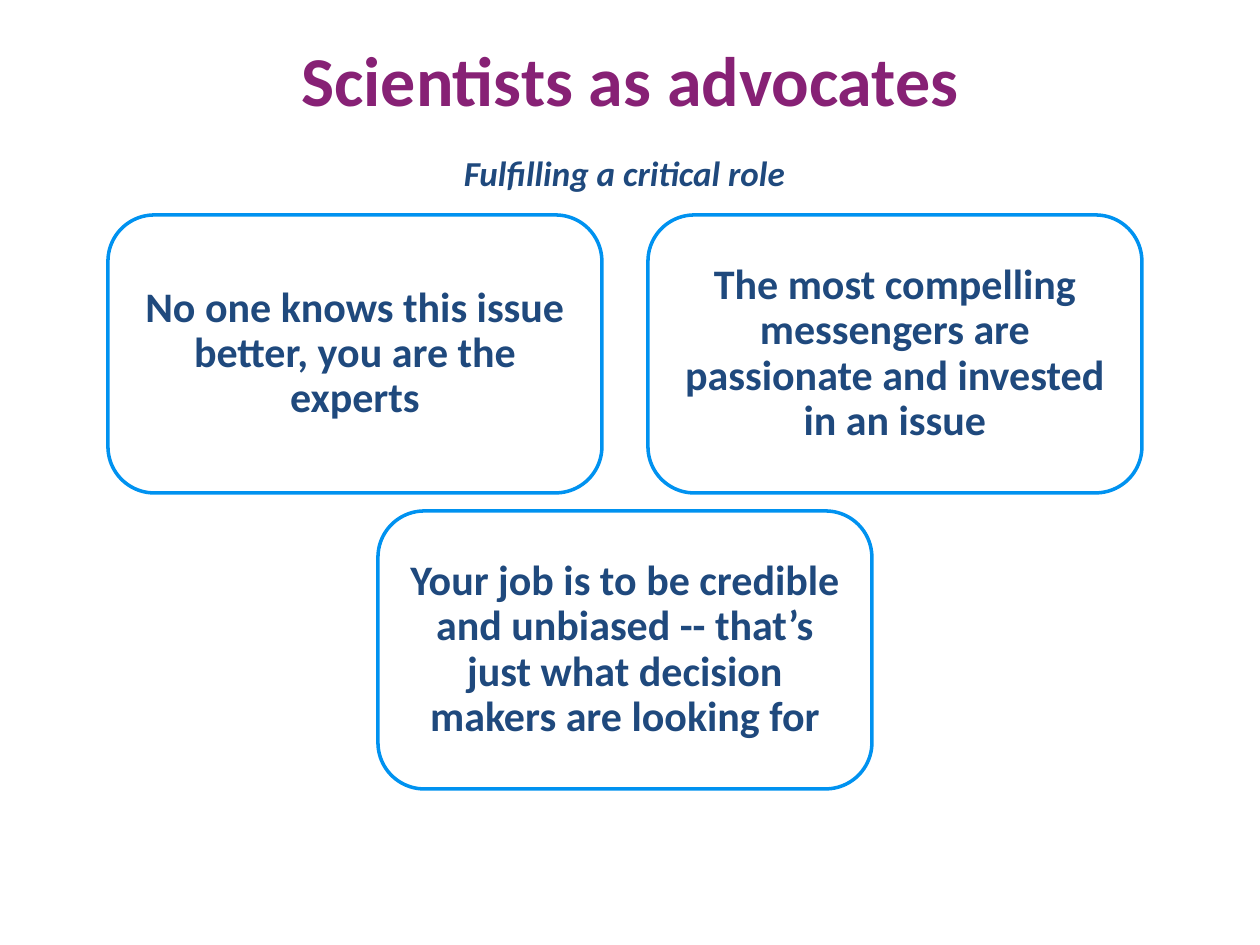
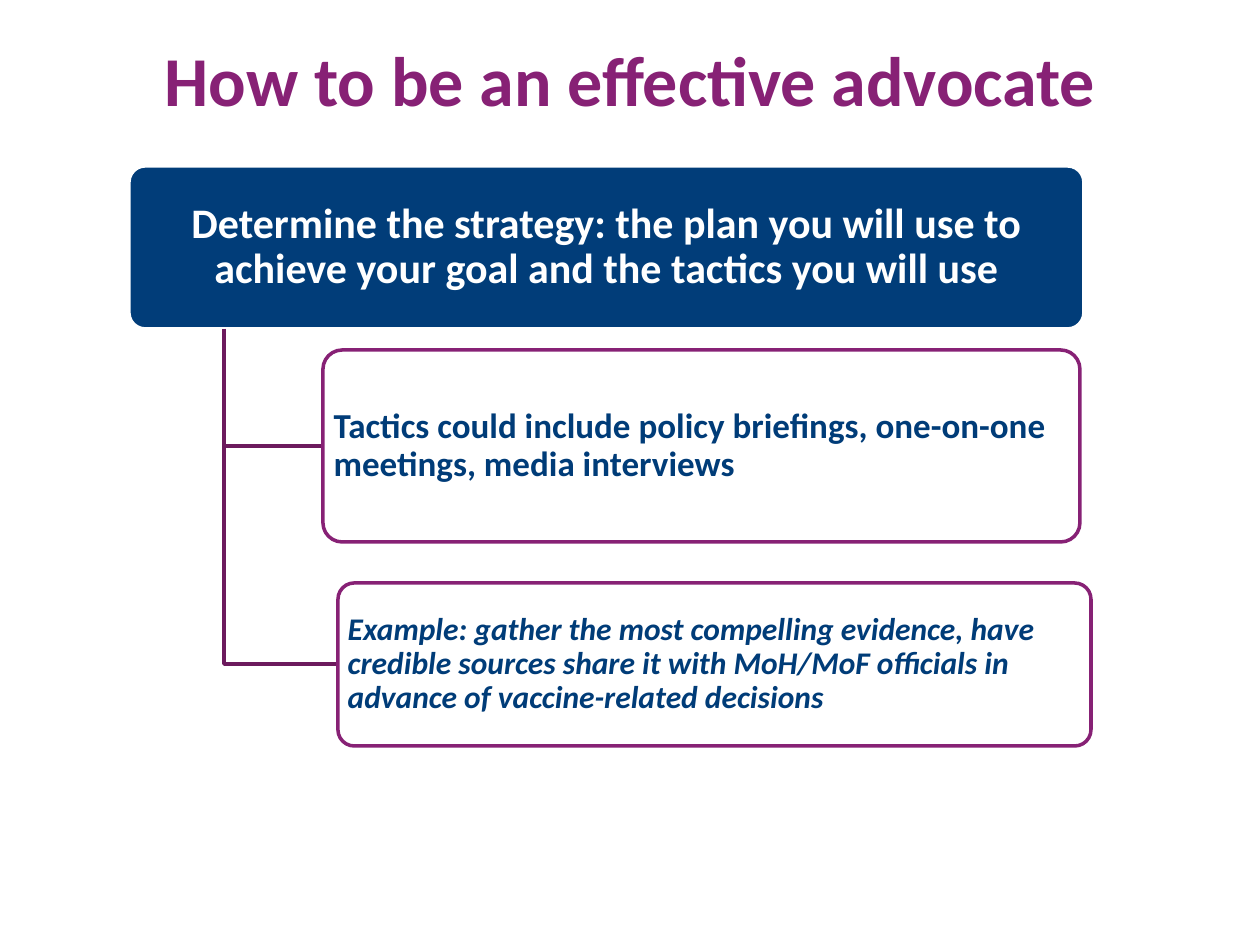
"""Builds two slides on scientists as advocates."""
from dataclasses import dataclass

from pptx import Presentation
from pptx.dml.color import RGBColor
from pptx.enum.shapes import MSO_SHAPE
from pptx.enum.text import MSO_ANCHOR, PP_ALIGN
from pptx.util import Pt

ROUNDED = MSO_SHAPE.ROUNDED_RECTANGLE
LEFT, CENTER = PP_ALIGN.LEFT, PP_ALIGN.CENTER
TOP, MIDDLE = MSO_ANCHOR.TOP, MSO_ANCHOR.MIDDLE
PX = 914400 / 126


@dataclass(frozen=True)
class Theme:
    font: str = "Calibri"
    plum: str = "872175"
    dark_plum: str = "6C1A5D"
    sky: str = "0092F0"
    navy: str = "1F497D"
    strategy_fill: str = "013D79"
    tactic_text: str = "003C78"
    white: str = "FFFFFF"
    title_size: int = 40
    heading_size: int = 24
    body_size: int = 20
    example_size: int = 18
    line_width: int = 2


THEME = Theme()

ROLE = {
    "title": "Scientists as advocates",
    "subtitle": "Fulfilling a critical role",
    "cards": [
        "No one knows this issue better, you are the experts",
        "The most compelling messengers are passionate and invested in an issue",
        "Your job is to be credible and unbiased -- that’s just what decision makers are looking for",
    ],
}
METHOD = {
    "title": "How to be an effective advocate",
    "strategy": "Determine the strategy: the plan you will use to achieve your goal and the tactics you will use",
    "tactics": [
        ("Tactics could include policy briefings, one-on-one meetings, media interviews",
         (323, 350, 757, 192), THEME.body_size, False),
        ("Example: gather the most compelling evidence, have credible sources share it "
         "with MoH/MoF officials in advance of vaccine-related decisions",
         (338, 583, 753, 163), THEME.example_size, True),
    ],
}

TITLE_BOX = (63, 0, 1134, 157)
SUBTITLE_BOX = (273, 145, 703, 55)
CARD_LEFT, CARD_TOP, CARD_WIDTH, CARD_HEIGHT = 108, 215, 494, 278
CARD_GAP_X, CARD_GAP_Y, CARDS_PER_ROW = 46, 18, 2
STRATEGY_BOX = (129, 166, 955, 163)
TRUNK_X = 224


def emu(px):
    return round(px * PX)


def rgb(color):
    return RGBColor.from_string(color)


def write(shape, text, *, size, color, align=CENTER, anchor=MIDDLE, italic=False,
          spacing=1.0, inset=(13, 6)):
    frame = shape.text_frame
    frame.word_wrap = True
    frame.vertical_anchor = anchor
    frame.margin_left = frame.margin_right = emu(inset[0])
    frame.margin_top = frame.margin_bottom = emu(inset[1])
    paragraph = frame.paragraphs[0]
    paragraph.text = text
    paragraph.alignment = align
    paragraph.line_spacing = spacing
    font = paragraph.font
    font.name, font.size, font.bold, font.italic = THEME.font, Pt(size), True, italic
    font.color.rgb = rgb(color)


def outline(shape, color):
    shape.shadow.inherit = False
    shape.line.color.rgb = rgb(color)
    shape.line.width = Pt(THEME.line_width)


def add_label(slide, box, text, **style):
    write(slide.shapes.add_textbox(*map(emu, box)), text, **style)


def add_panel(slide, box, text, *, border, fill=None, corner=0.1, **style):
    panel = slide.shapes.add_shape(ROUNDED, *map(emu, box))
    panel.adjustments[0] = corner
    outline(panel, border)
    if fill:
        panel.fill.solid()
        panel.fill.fore_color.rgb = rgb(fill)
    else:
        panel.fill.background()
    write(panel, text, spacing=0.9, **style)


def add_branch(slide, start_y, end_x, end_y):
    builder = slide.shapes.build_freeform(TRUNK_X, start_y, scale=PX)
    builder.add_line_segments([(TRUNK_X, end_y), (end_x, end_y)], close=False)
    branch = builder.convert_to_shape()
    branch.fill.background()
    outline(branch, THEME.dark_plum)


def add_titled_slide(deck, title):
    slide = deck.slides.add_slide(deck.slide_layouts[6])
    add_label(slide, TITLE_BOX, title, size=THEME.title_size, color=THEME.plum)
    return slide


def build_role(deck):
    slide = add_titled_slide(deck, ROLE["title"])
    cards = ROLE["cards"]
    step_x, step_y = CARD_WIDTH + CARD_GAP_X, CARD_HEIGHT + CARD_GAP_Y
    for index, text in enumerate(cards):
        row, column = divmod(index, CARDS_PER_ROW)
        in_row = min(CARDS_PER_ROW, len(cards) - row * CARDS_PER_ROW)
        left = CARD_LEFT + column * step_x + (CARDS_PER_ROW - in_row) * step_x // 2
        box = (left, CARD_TOP + row * step_y, CARD_WIDTH, CARD_HEIGHT)
        add_panel(slide, box, text, border=THEME.sky, corner=0.1667,
                  size=THEME.heading_size, color=THEME.navy, inset=(12, 12))
    add_label(slide, SUBTITLE_BOX, ROLE["subtitle"], size=THEME.body_size,
              color=THEME.navy, italic=True, anchor=TOP)


def build_method(deck):
    slide = add_titled_slide(deck, METHOD["title"])
    add_panel(slide, STRATEGY_BOX, METHOD["strategy"], border=THEME.white,
              fill=THEME.strategy_fill, size=THEME.heading_size, color=THEME.white,
              inset=(6, 4))
    strategy_bottom = STRATEGY_BOX[1] + STRATEGY_BOX[3]
    for text, box, size, italic in METHOD["tactics"]:
        left, top, _, height = box
        add_branch(slide, strategy_bottom, left, top + height // 2)
        add_panel(slide, box, text, border=THEME.plum, fill=THEME.white, size=size,
                  color=THEME.tactic_text, italic=italic, align=LEFT, inset=(5, 4))


def main():
    deck = Presentation()
    deck.slide_width, deck.slide_height = emu(1260), emu(945)
    build_role(deck)
    build_method(deck)
    deck.save("out.pptx")


if __name__ == "__main__":
    main()
